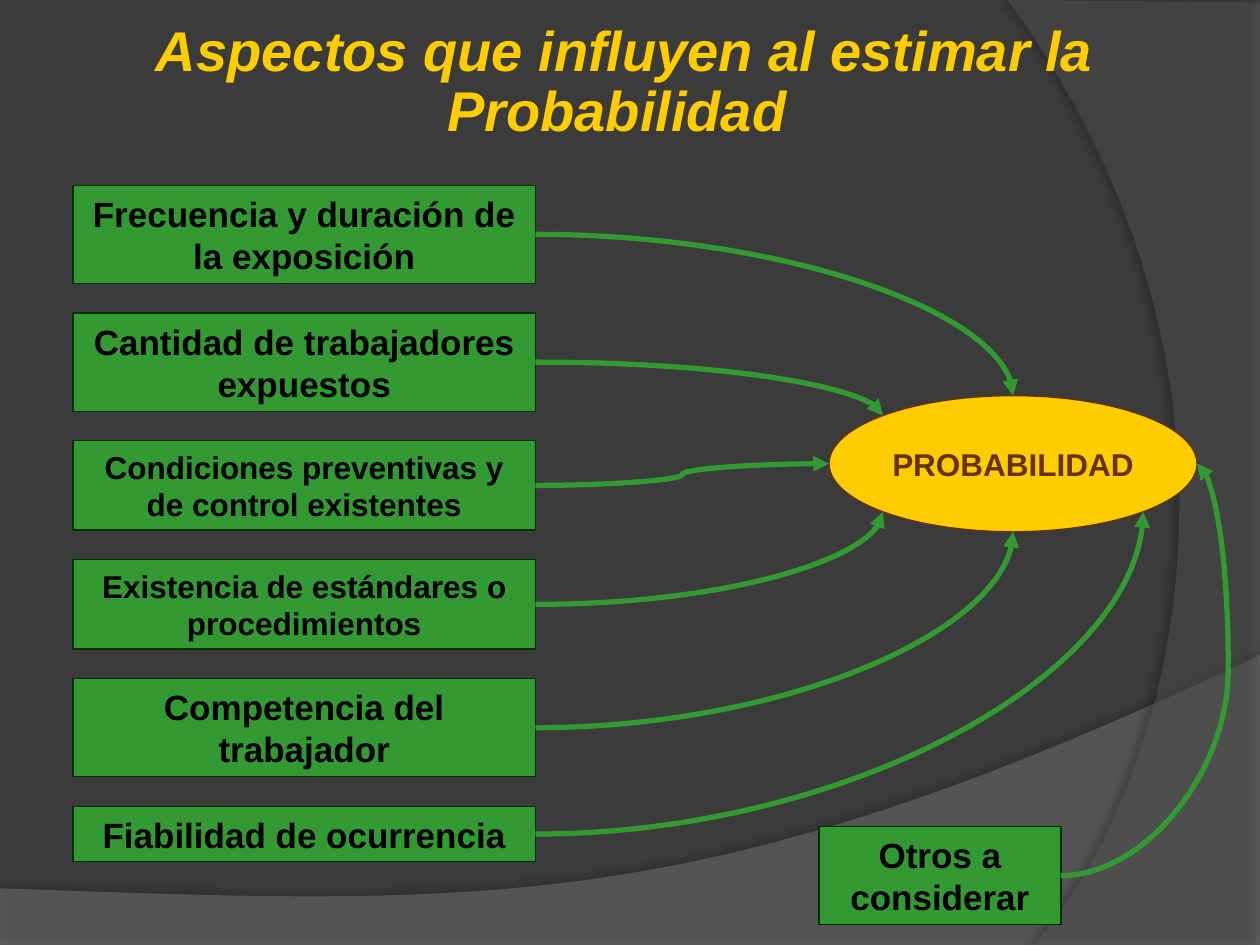
from dataclasses import dataclass
from math import cos, radians, sin

from lxml import etree
from pptx import Presentation
from pptx.dml.color import RGBColor
from pptx.enum.shapes import MSO_CONNECTOR, MSO_SHAPE
from pptx.enum.text import MSO_ANCHOR, PP_ALIGN
from pptx.oxml.ns import qn
from pptx.util import Inches, Pt

CURVE = MSO_CONNECTOR.CURVE
RECTANGLE, OVAL = MSO_SHAPE.RECTANGLE, MSO_SHAPE.OVAL
CENTER, MIDDLE, TOP = PP_ALIGN.CENTER, MSO_ANCHOR.MIDDLE, MSO_ANCHOR.TOP
TITLE_ONLY = 5


@dataclass(frozen=True)
class Theme:
    """Colours, font and type sizes of the slide."""
    font: str = "Arial"
    background: str = "3B3B3B"
    lower_wave: str = "7F7F7F"
    right_wave: str = "5E5E5E"
    shadow: str = "000000"
    gold: str = "FFCC00"
    brown: str = "663300"
    green: str = "339933"
    dark_green: str = "003300"
    text: str = "000000"
    title_size: int = 32
    large: int = 20
    small: int = 18
    outline: float = 0.75
    arrow: int = 3


THEME = Theme()
FACTORS = [
    ("Frecuencia y duración de la exposición", THEME.large, 0.78),
    ("Cantidad de trabajadores expuestos", THEME.large, 0.78),
    ("Condiciones preventivas y de control existentes", THEME.small, 0.71),
    ("Existencia de estándares o procedimientos", THEME.small, 0.71),
    ("Competencia del trabajador", THEME.large, 0.78),
    ("Fiabilidad de ocurrencia", THEME.large, 0.44),
]


def color(value):
    """Turn a hex string into a colour."""
    return RGBColor.from_string(value)


def add_child(parent, tag, **attributes):
    """Append a DrawingML element with the given attributes."""
    values = {name: str(value) for name, value in attributes.items()}
    return etree.SubElement(parent, qn(tag), values)


def write(shape, text, size, ink):
    """Put one bold centred paragraph in a shape and return it."""
    frame = shape.text_frame
    frame.word_wrap = True
    frame.vertical_anchor = MIDDLE
    frame.text = text
    paragraph = frame.paragraphs[0]
    paragraph.alignment = CENTER
    font = paragraph.font
    font.name, font.size, font.bold = THEME.font, Pt(size), True
    font.color.rgb = color(ink)
    return paragraph


def bezier(points, steps=40):
    """Sample a cubic curve after its first point."""
    weights = [((1 - t) ** 3, 3 * t * (1 - t) ** 2, 3 * t * t * (1 - t), t ** 3)
               for t in (step / steps for step in range(1, steps + 1))]
    return [tuple(sum(w * p[axis] for w, p in zip(weight, points)) for axis in (0, 1))
            for weight in weights]


def add_wave(slide, points, fill, opacity, shadow_opacity, distance, direction):
    """Draw a translucent backdrop outline with a soft shadow."""
    outline = [(Inches(x), Inches(y)) for x, y in points]
    builder = slide.shapes.build_freeform(*outline[0])
    builder.add_line_segments(outline[1:], close=True)
    shape = builder.convert_to_shape()
    shape.fill.solid()
    shape.fill.fore_color.rgb = color(fill)
    shape.line.fill.background()
    properties = shape._element.spPr
    add_child(properties.find(".//" + qn("a:srgbClr")), "a:alpha", val=opacity * 1000)
    effects = add_child(properties, "a:effectLst")
    shadow = add_child(effects, "a:outerShdw", blurRad=Pt(4), dist=Pt(distance),
                       dir=direction * 60000, algn="ctr", rotWithShape=0)
    shadow_color = add_child(shadow, "a:srgbClr", val=THEME.shadow)
    add_child(shadow_color, "a:alpha", val=shadow_opacity * 1000)


def add_backdrop(slide, width, height):
    """Fill the slide box with its dark ground and two waves."""
    slide.background.fill.solid()
    slide.background.fill.fore_color.rgb = color(THEME.background)
    lower = [(0, 7.05), (0, height), (width, height), (width, 5.2)]
    lower += bezier([(width, 5.2), (5.59, 7.29), (3.91, 7.19), (0, 7.05)])
    add_wave(slide, lower, THEME.lower_wave, 45, 35, 3.5, 270)
    right = [(width, 0.02), (width, height), (8.21, height)]
    right += bezier([(8.21, height), (9.35, 6.19), (10.18, 3), (8, 0)])
    add_wave(slide, right, THEME.right_wave, 40, 45, 4, 180)


def add_title(slide, left, top, width, height):
    """Place the title placeholder in front of the backdrop."""
    title = slide.shapes.title
    slide.shapes._spTree.append(title._element)
    title.left, title.top = Inches(left), Inches(top)
    title.width, title.height = Inches(width), Inches(height)
    paragraph = write(title, "Aspectos que influyen al estimar la Probabilidad ",
                      THEME.title_size, THEME.gold)
    paragraph.font.italic = True
    paragraph.line_spacing = 0.9
    title.text_frame.vertical_anchor = TOP


def add_block(slide, kind, box, text, size, fill, line, ink):
    """Draw a filled shape with its label."""
    shape = slide.shapes.add_shape(kind, *map(Inches, box))
    shape.shadow.inherit = False
    shape.fill.solid()
    shape.fill.fore_color.rgb = color(fill)
    shape.line.color.rgb = color(line)
    shape.line.width = Pt(THEME.outline)
    write(shape, text, size, ink)
    return shape


def add_factor(slide, box, text, size):
    """Draw a green box and return the middle of its right side."""
    add_block(slide, RECTANGLE, box, text, size, THEME.green, THEME.dark_green, THEME.text)
    left, top, width, height = box
    return left + width, top + height / 2


def add_factors(slide, left, top, width, height):
    """Stack the factors with equal gaps and return their exits."""
    gap = (height - sum(factor[2] for factor in FACTORS)) / (len(FACTORS) - 1)
    exits = []
    for text, size, box_height in FACTORS:
        exits.append(add_factor(slide, (left, top, width, box_height), text, size))
        top += box_height + gap
    return exits


def add_probability(slide, left, top, width, height):
    """Draw the ellipse and return its rim points, counter-clockwise from the top."""
    shape = add_block(slide, OVAL, (left, top, width, height), "PROBABILIDAD",
                      THEME.small, THEME.gold, THEME.brown, THEME.brown)
    shape.text_frame.margin_left = shape.text_frame.margin_right = 0
    angles = [radians(270 - 45 * step) for step in range(7)]
    return [(left + width / 2 * (1 + cos(angle)), top + height / 2 * (1 + sin(angle)))
            for angle in angles]


def add_arrow(slide, start, end, bend=None):
    """Draw a curved arrow: a quarter turn, or an S curve with the given bend."""
    connector = slide.shapes.add_connector(CURVE, *map(Inches, start + end))
    connector.line.color.rgb = color(THEME.green)
    connector.line.width = Pt(THEME.arrow)
    properties = connector._element.spPr
    add_child(properties.find(qn("a:ln")), "a:tailEnd", type="triangle")
    add_child(properties, "a:effectLst")
    geometry = properties.find(qn("a:prstGeom"))
    if bend is None:
        geometry.set("prst", "curvedConnector2")
    else:
        add_child(geometry.find(qn("a:avLst")), "a:gd", name="adj1",
                  fmla=f"val {round(bend * 100000)}")


def main():
    """Build and save the slide."""
    presentation = Presentation()
    presentation.slide_width, presentation.slide_height = Inches(10), Inches(7.5)
    slide = presentation.slides.add_slide(presentation.slide_layouts[TITLE_ONLY])
    add_backdrop(slide, 10, 7.5)
    add_title(slide, 0.51, 0.13, 8.9, 1.06)
    rim = add_probability(slide, 6.58, 3.14, 2.92, 1.08)
    exits = add_factors(slide, 0.58, 1.47, 3.67, 5.37)
    exits.append(add_factor(slide, (6.5, 6.56, 1.92, 0.78), "Otros a considerar", THEME.large))
    bends = [None, None, 0.5, None, None, None, 1.23]
    for start, end, bend in zip(exits, rim, bends):
        add_arrow(slide, start, end, bend)
    presentation.save("out.pptx")


if __name__ == "__main__":
    main()
